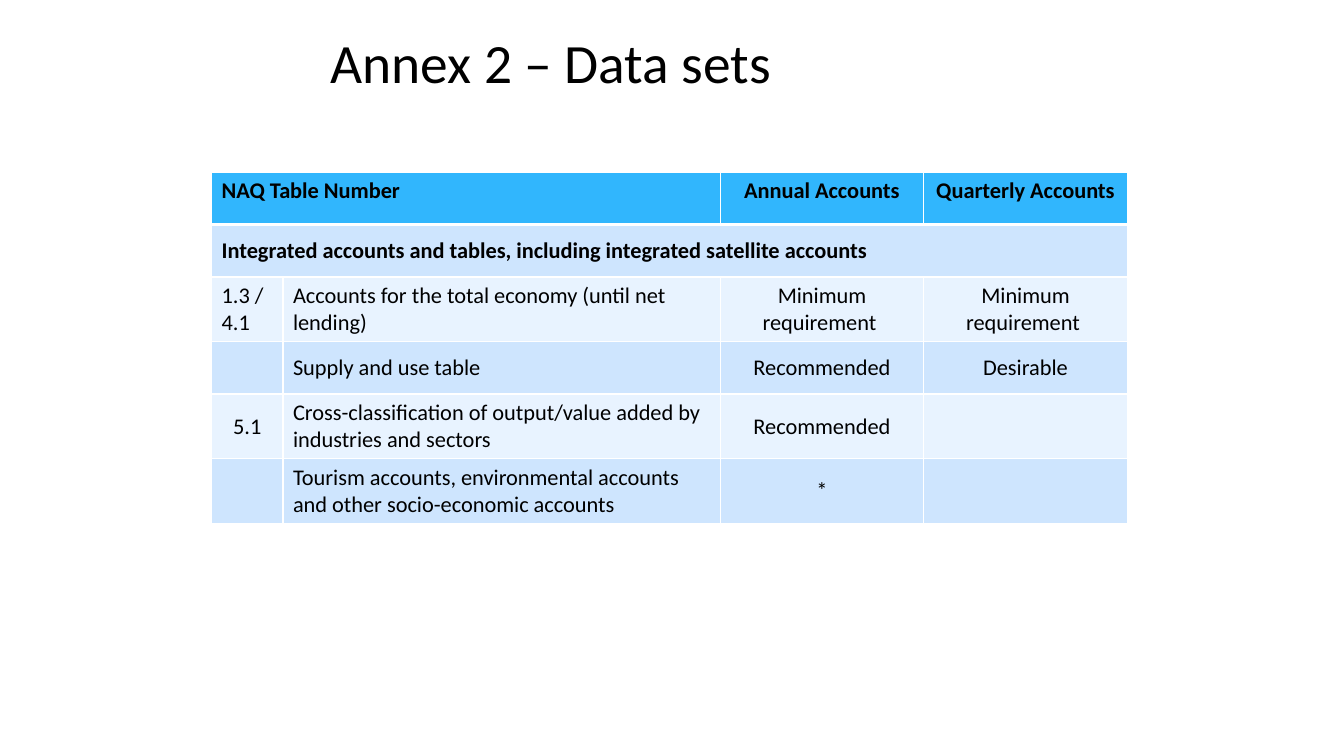
from lxml import etree
from pptx import Presentation
from pptx.dml.color import RGBColor
from pptx.enum.text import MSO_ANCHOR, PP_ALIGN
from pptx.oxml.ns import qn
from pptx.util import Cm, Pt

LEFT, CENTER = PP_ALIGN.LEFT, PP_ALIGN.CENTER
TOP, MIDDLE = MSO_ANCHOR.TOP, MSO_ANCHOR.MIDDLE

FONT = "Calibri"
BLACK, WHITE = "000000", "FFFFFF"
HEAD, DARK, LIGHT = "31B6FD", "CEE5FE", "E8F3FF"

WIDTHS = [1.8, 11.02, 5.13, 5.13]
HEIGHTS = [1.32, 1.32, 1.63, 1.32, 1.63, 1.63]
ROWS = [
    ["NAQ Table Number", "", "Annual Accounts", "Quarterly Accounts"],
    ["Integrated accounts and tables, including integrated satellite accounts",
     "", "", ""],
    ["1.3 / 4.1", "Accounts for the total economy (until net lending)",
     "Minimum requirement ", "Minimum requirement "],
    ["", "Supply and use table", "Recommended", "Desirable"],
    ["5.1", "Cross-classification of output/value added by industries and sectors",
     "Recommended", ""],
    ["", "Tourism accounts, environmental accounts and other socio-economic accounts",
     "*", ""],
]


def color(code):
    return RGBColor.from_string(code)


def write(frame, text, size=16, bold=False, align=LEFT, before=None, spacing=None):
    frame.word_wrap = True
    par = frame.paragraphs[0]
    par.alignment = align
    par.line_spacing = spacing
    if before:
        par.space_before = Pt(before)
    run = par.add_run()
    run.text = text
    font = run.font
    font.name, font.size, font.bold = FONT, Pt(size), bold
    font.color.rgb = color(BLACK)


def border(cell, sides):
    """Draw white cell edges; sides maps each edge tag to its width in points."""
    props = cell._tc.get_or_add_tcPr()
    for spot, (side, width) in enumerate(sides.items()):
        line = etree.Element(qn(f"a:{side}"), w=str(Pt(width)))
        fill = etree.SubElement(line, qn("a:solidFill"))
        etree.SubElement(fill, qn("a:srgbClr"), val=WHITE)
        props.insert(spot, line)


def add_title(slide, text):
    box = slide.shapes.add_textbox(Cm(8.08), Cm(0.76), Cm(20.45), Cm(1.78))
    write(box.text_frame, text, size=39.6, spacing=0.9)
    box.text_frame.vertical_anchor = MIDDLE


def fill_cell(cell, text, row, col):
    cell.fill.solid()
    cell.fill.fore_color.rgb = color(HEAD if row == 0 else DARK if row % 2 else LIGHT)
    cell.vertical_anchor = MIDDLE if row else TOP
    border(cell, {"lnL": 1, "lnR": 1,
                  "lnT": 3 if row == 1 else 1,
                  "lnB": 3 if row == 0 else 1})
    if text:
        centred = col > 1 or text == "5.1"
        write(cell.text_frame, text, bold=row < 2,
              align=CENTER if centred else LEFT,
              before=4 if text == "1.3 / 4.1" else None)


def add_grid(slide):
    frame = slide.shapes.add_table(len(ROWS), len(WIDTHS), Cm(5.33), Cm(4.34),
                                   Cm(sum(WIDTHS)), Cm(sum(HEIGHTS)))
    table = frame.table
    table.first_row = table.horz_banding = False
    for col, width in zip(table.columns, WIDTHS):
        col.width = Cm(width)
    for row, height in zip(table.rows, HEIGHTS):
        row.height = Cm(height)
    for row, texts in enumerate(ROWS):
        for col, text in enumerate(texts):
            fill_cell(table.cell(row, col), text, row, col)
    table.cell(0, 0).merge(table.cell(0, 1))
    table.cell(1, 0).merge(table.cell(1, 3))


def main():
    deck = Presentation()
    deck.slide_width, deck.slide_height = Cm(33.87), Cm(19.05)
    slide = deck.slides.add_slide(deck.slide_layouts[6])
    add_title(slide, "Annex 2 – Data sets")
    add_grid(slide)
    deck.save("out.pptx")


if __name__ == "__main__":
    main()
